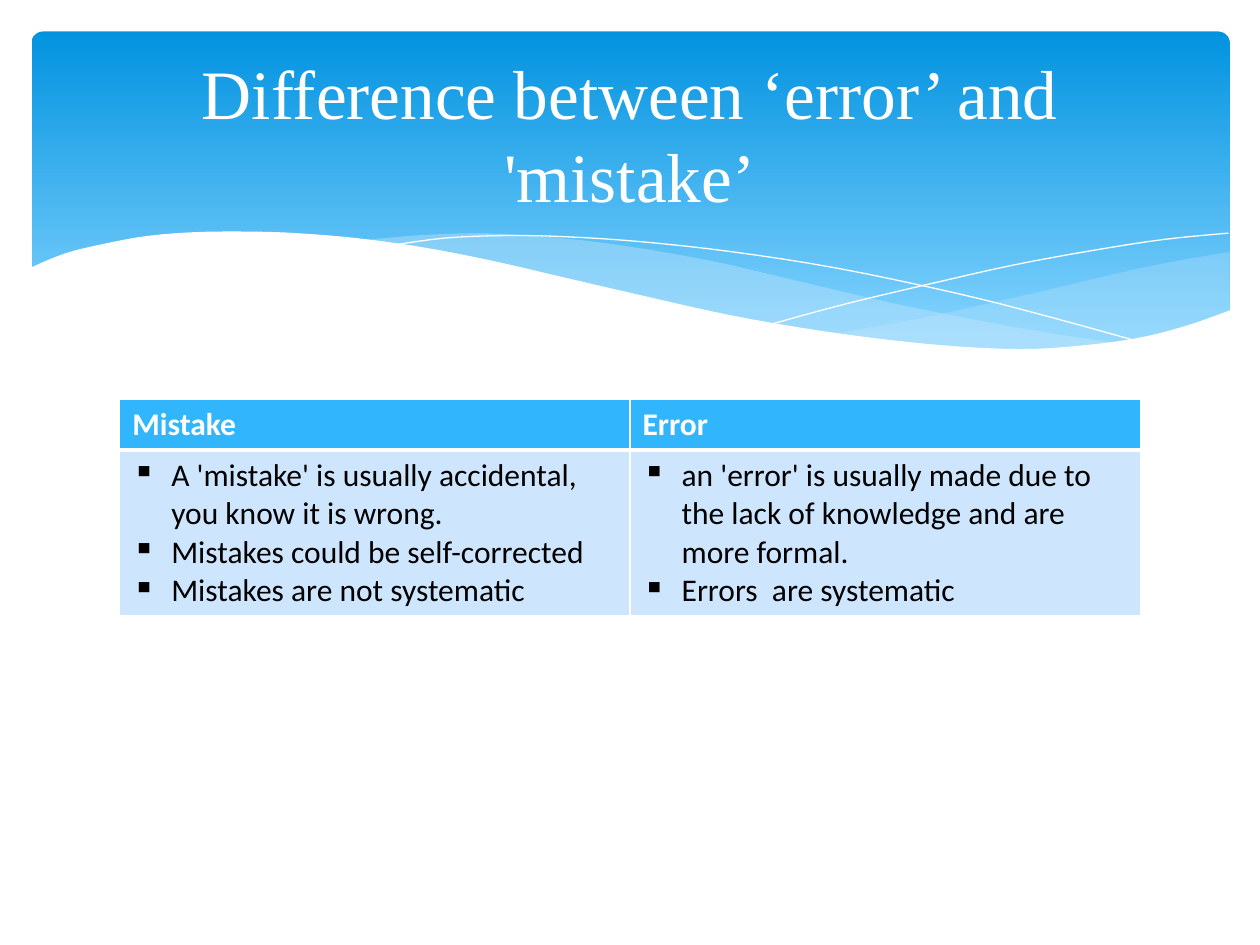
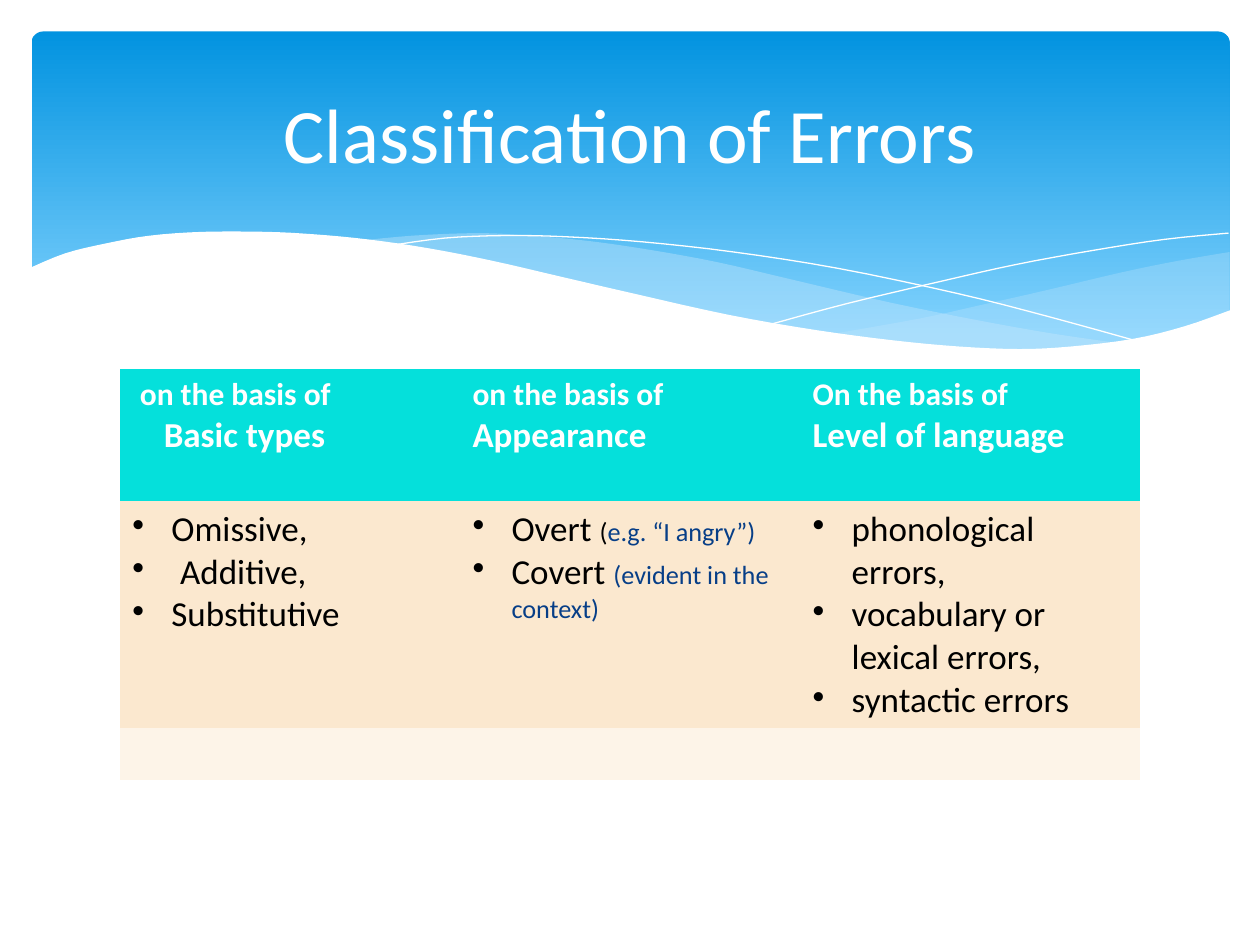
from dataclasses import dataclass

from lxml import etree
from pptx import Presentation
from pptx.dml.color import RGBColor
from pptx.enum.shapes import MSO_SHAPE
from pptx.enum.text import MSO_ANCHOR, PP_ALIGN
from pptx.oxml.ns import qn
from pptx.util import Inches, Pt

ROUNDED = MSO_SHAPE.ROUNDED_RECTANGLE
MIDDLE = MSO_ANCHOR.MIDDLE
CENTER = PP_ALIGN.CENTER
PLAIN_TABLE_STYLE = "{2D5ABB26-0587-4C30-8999-92F81FD0307C}"
BLANK_LAYOUT = 6


@dataclass(frozen=True)
class Theme:
    font: str = "Calibri"
    serif: str = "Times New Roman"
    white: str = "FFFFFF"
    black: str = "000000"
    band_top: str = "0293E0"
    band_bottom: str = "83D3FE"
    wave: str = "C6E7FC"
    blue_header: str = "31B6FD"
    blue_body: str = "CEE5FE"
    teal_header: str = "05E0DB"
    cream_body: str = "FBE8CF"
    cream_light: str = "FDF4E8"
    example: str = "073E87"
    title_size: float = 44
    long_title_size: float = 39.6
    large: float = 20
    normal: float = 18
    small: float = 15


THEME = Theme()

# Knots of the curves under the title band, in inches
RIGHT_WAVE_TOP = [(9.76, 2), (9.35, 2.07), (8.91, 2.16), (8.32, 2.3), (7.79, 2.42),
                  (7.29, 2.53), (6.61, 2.65)]
RIGHT_WAVE_BOTTOM = [(6.61, 2.65), (7.05, 2.71), (7.57, 2.76), (8.03, 2.78), (8.54, 2.76),
                     (8.97, 2.7), (9.42, 2.59), (9.76, 2.47)]
LONG_WAVE_TOP = [(8.93, 2.73), (8.37, 2.65), (7.75, 2.54), (7.06, 2.4), (6.29, 2.22),
                 (5.69, 2.08), (5.14, 1.98), (4.65, 1.91), (4.2, 1.87), (3.8, 1.85),
                 (3.28, 1.87), (2.86, 1.91)]
LONG_WAVE_BOTTOM = [(2.86, 1.91), (3.42, 1.99), (4.04, 2.11), (4.91, 2.32), (5.66, 2.48),
                    (6.34, 2.61), (6.95, 2.7), (7.48, 2.76), (8.07, 2.78), (8.57, 2.77),
                    (8.93, 2.73)]
FALLING_LINE = [(3.09, 1.95), (3.53, 1.89), (4.01, 1.87), (4.5, 1.88), (5.1, 1.92),
                (5.82, 2), (6.65, 2.13), (7.6, 2.33), (8.31, 2.51), (9.07, 2.72)]
RISING_LINE = [(6.13, 2.57), (6.72, 2.41), (7.48, 2.23), (8.06, 2.1), (8.66, 1.99),
               (9.24, 1.9), (9.75, 1.85)]
WHITE_EDGE = [(9.77, 2.46), (9.4, 2.59), (8.99, 2.69), (8.5, 2.75), (8.09, 2.77),
              (7.61, 2.75), (7.08, 2.7), (6.48, 2.62), (5.79, 2.5), (5.03, 2.33),
              (4.47, 2.2), (3.91, 2.07), (3.4, 1.97), (2.92, 1.9), (2.5, 1.86),
              (2.11, 1.84), (1.61, 1.84), (1.19, 1.87), (0.85, 1.93), (0.52, 2.01),
              (0.23, 2.13)]


@dataclass(frozen=True)
class Line:
    """One paragraph of a cell: runs are (text, size, colour)."""
    runs: tuple
    bold: bool = False
    bullet: str = ""
    indent: float = 0


def rgb(value):
    return RGBColor.from_string(value)


def heading(text, size=THEME.normal, indent=0):
    return Line(((text, size, THEME.white),), bold=True, indent=indent)


def item(text, size, bullet, *extra_runs, indent=0.31):
    return Line(((text, size, THEME.black), *extra_runs), bullet=bullet, indent=indent)


def smooth_curve(knots, steps=4):
    """Catmull-Rom points through the knots."""
    padded = [knots[0], *knots, knots[-1]]
    points = []
    for a, b, c, d in zip(padded, padded[1:], padded[2:], padded[3:]):
        for step in range(steps):
            t = step / steps
            points.append(tuple(
                (2 * q + (r - p) * t + (2 * p - 5 * q + 4 * r - s) * t ** 2
                 + (3 * q - p - 3 * r + s) * t ** 3) / 2
                for p, q, r, s in zip(a, b, c, d)))
    return points + [knots[-1]]


def add_freeform(slide, points, closed):
    start, *others = [(Inches(x), Inches(y)) for x, y in points]
    builder = slide.shapes.build_freeform(*start)
    builder.add_line_segments(others, close=closed)
    shape = builder.convert_to_shape()
    shape.shadow.inherit = False
    return shape


def add_area(slide, points, color, opacity=100):
    shape = add_freeform(slide, points, True)
    shape.fill.solid()
    shape.fill.fore_color.rgb = rgb(color)
    shape.line.fill.background()
    if opacity < 100:
        color_node = shape.fill._xPr.find(qn("a:solidFill"))[0]
        etree.SubElement(color_node, qn("a:alpha"), val=str(opacity * 1000))


def add_hairline(slide, knots):
    shape = add_freeform(slide, smooth_curve(knots), False)
    shape.fill.background()
    shape.line.color.rgb = rgb(THEME.white)
    shape.line.width = Pt(0)


def add_band(slide):
    band = slide.shapes.add_shape(ROUNDED, Inches(0.25), Inches(0.25), Inches(9.51), Inches(2.7))
    band.adjustments[0] = 0.034
    band.shadow.inherit = False
    band.line.fill.background()
    band.fill.gradient()
    band.fill.gradient_angle = 270
    stops = zip(band.fill.gradient_stops, (0, 0.9), (THEME.band_top, THEME.band_bottom))
    for stop, position, color in stops:
        stop.position = position
        stop.color.rgb = rgb(color)

    # Waves, hairlines and the white lower edge
    add_area(slide, smooth_curve(RIGHT_WAVE_TOP) + smooth_curve(RIGHT_WAVE_BOTTOM), THEME.wave, 29)
    add_area(slide, smooth_curve(LONG_WAVE_TOP) + smooth_curve(LONG_WAVE_BOTTOM), THEME.wave, 40)
    add_hairline(slide, FALLING_LINE)
    add_hairline(slide, RISING_LINE)
    add_area(slide, smooth_curve(WHITE_EDGE) + [(0.23, 3.29), (9.77, 3.29)], THEME.white)


def format_run(run, font, size, color, bold=False):
    run.font.name = font
    run.font.size = Pt(size)
    run.font.color.rgb = rgb(color)
    run.font.bold = bold


def add_title(slide, text, font, size):
    box = slide.shapes.add_textbox(Inches(0.5), Inches(0.37), Inches(9), Inches(1.37))
    frame = box.text_frame
    frame.word_wrap = True
    frame.vertical_anchor = MIDDLE
    frame.text = text
    paragraph = frame.paragraphs[0]
    paragraph.alignment = CENTER
    format_run(paragraph.runs[0], font, size, THEME.white)


def write_line(paragraph, line):
    for text, size, color in line.runs:
        run = paragraph.add_run()
        run.text = text
        format_run(run, THEME.font, size, color, line.bold)
    properties = paragraph._p.get_or_add_pPr()
    indent = Inches(line.indent)
    properties.set("marL", str(indent))
    if line.bullet:
        properties.set("indent", str(-indent))
        etree.SubElement(properties, qn("a:buChar"), char=line.bullet)


def set_borders(cell, bottom_width):
    properties = cell._tc.get_or_add_tcPr()
    for side, width in (("L", 1), ("R", 1), ("T", 1), ("B", bottom_width)):
        border = etree.SubElement(properties, qn(f"a:ln{side}"), w=str(Pt(width)))
        fill = etree.SubElement(border, qn("a:solidFill"))
        etree.SubElement(fill, qn("a:srgbClr"), val=THEME.white)


def add_table(slide, top, row_heights, row_fills, rows, bottom_borders=None):
    """Full-width table with equal columns; each cell is a list of lines."""
    width = Inches(8.1)
    frame = slide.shapes.add_table(len(rows), len(rows[0]), Inches(0.95), Inches(top),
                                   width, Inches(sum(row_heights)))
    table = frame.table
    table._tbl.tblPr.find(qn("a:tableStyleId")).text = PLAIN_TABLE_STYLE
    for column in table.columns:
        column.width = width // len(rows[0])
    for row_index, cells in enumerate(rows):
        table.rows[row_index].height = Inches(row_heights[row_index])
        for column_index, lines in enumerate(cells):
            cell = table.cell(row_index, column_index)
            if bottom_borders:
                set_borders(cell, bottom_borders[row_index])
            cell.fill.solid()
            cell.fill.fore_color.rgb = rgb(row_fills[row_index])
            for line_index, line in enumerate(lines):
                text_frame = cell.text_frame
                paragraph = text_frame.add_paragraph() if line_index else text_frame.paragraphs[0]
                write_line(paragraph, line)


def add_slide(presentation, title, font, size):
    slide = presentation.slides.add_slide(presentation.slide_layouts[BLANK_LAYOUT])
    add_band(slide)
    add_title(slide, title, font, size)
    return slide


def build_difference_slide(presentation):
    slide = add_slide(presentation, "Difference between ‘error’ and 'mistake’",
                      THEME.serif, THEME.long_title_size)
    mistakes = ("A 'mistake' is usually accidental, you know it is wrong.",
                "Mistakes could be self-corrected",
                "Mistakes are not systematic")
    errors = ("an 'error' is usually made due to the lack of knowledge and are more formal.",
              "Errors  are systematic")
    body = [[item(text, THEME.normal, "▪") for text in texts] for texts in (mistakes, errors)]
    add_table(slide, 3.17, (0.4, 1.32), (THEME.blue_header, THEME.blue_body),
              [[[heading("Mistake")], [heading("Error")]], body], bottom_borders=(3, 1))


def build_classification_slide(presentation):
    slide = add_slide(presentation, "Classification of Errors", THEME.font, THEME.title_size)
    headers = [
        [heading("on the basis of", indent=0.06), heading("Basic types", THEME.large, 0.25)],
        [heading("on the basis of"), heading("Appearance", THEME.large)],
        [heading("On the basis of"), heading("Level of language", THEME.large)],
    ]
    large, small = THEME.large, THEME.small
    body = [
        [item("Omissive,", large, "•"),
         item("Additive,", large, "•", indent=0.38),
         item("Substitutive", large, "•")],
        [item("Overt ", large, "•", ("(", small, THEME.black),
              ("e.g. “I angry”)", small, THEME.example)),
         item("Covert ", large, "•", ("(evident in the context)", small, THEME.example))],
        [item(text, large, "•") for text in
         ("phonological errors,", "vocabulary or lexical errors,", "syntactic errors")],
    ]
    add_table(slide, 2.93, (1.05, 1.8, 0.41),
              (THEME.teal_header, THEME.cream_body, THEME.cream_light),
              [headers, body, [[], [], []]])


def main():
    presentation = Presentation()
    presentation.slide_width = Inches(10)
    presentation.slide_height = Inches(7.5)
    build_difference_slide(presentation)
    build_classification_slide(presentation)
    presentation.save("out.pptx")


if __name__ == "__main__":
    main()
